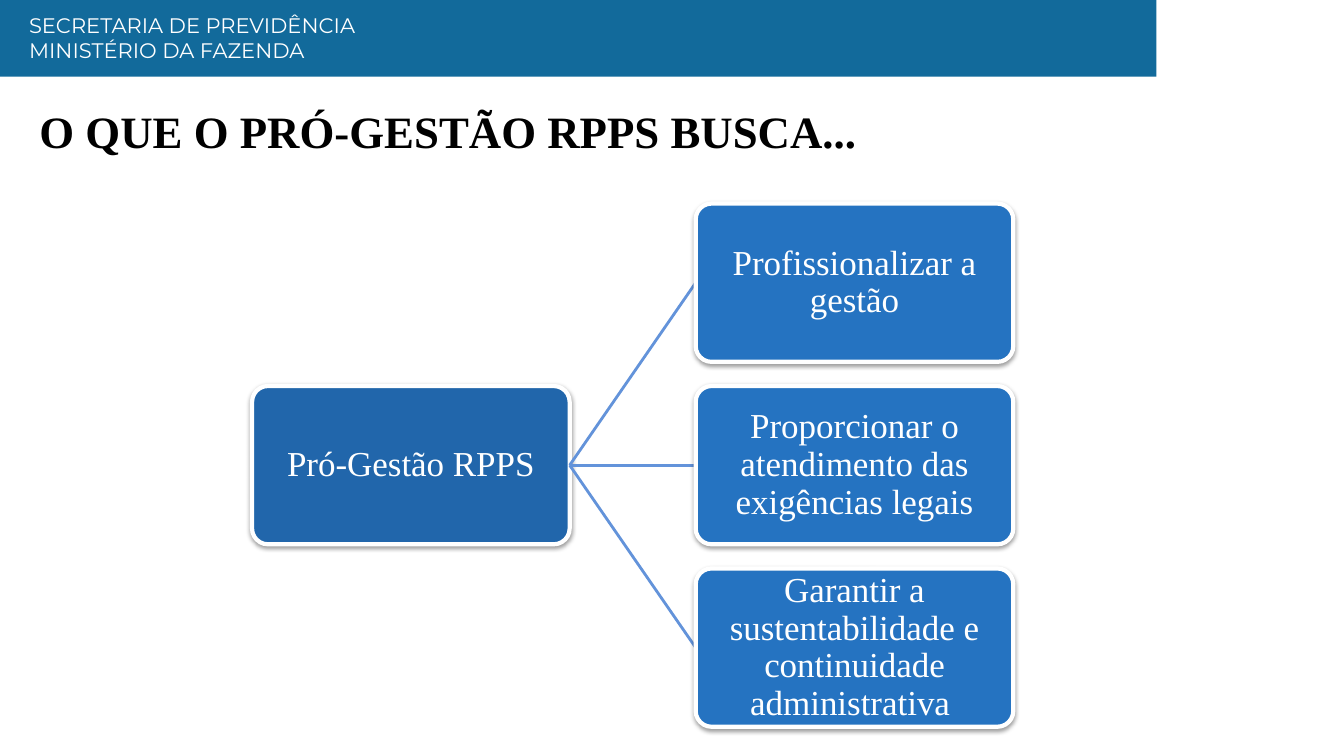
from lxml.etree import SubElement
from pptx import Presentation
from pptx.dml.color import RGBColor
from pptx.enum.shapes import MSO_CONNECTOR, MSO_SHAPE
from pptx.enum.text import MSO_ANCHOR, PP_ALIGN
from pptx.oxml.ns import qn
from pptx.util import Inches, Pt

WHITE = RGBColor(0xFF, 0xFF, 0xFF)
BLACK = RGBColor(0x00, 0x00, 0x00)
BANNER_BLUE = RGBColor(0x12, 0x6A, 0x9B)
ROOT_BLUE = RGBColor(0x21, 0x66, 0xAB)
GOAL_BLUE = RGBColor(0x25, 0x73, 0xC1)
LINE_BLUE = RGBColor(0x63, 0x93, 0xDA)

BOX_WIDTH, BOX_HEIGHT = 3.15, 1.57
ROOT_LEFT, GOAL_LEFT = 2.5, 6.9
FIRST_TOP, ROW_STEP = 2.02, 1.81
GOALS = [
    "Profissionalizar a gestão",
    "Proporcionar o atendimento das exigências legais",
    "Garantir a sustentabilidade e continuidade administrativa ",
]


class SlideBuilder:
    """Holds the current slide and its shared fonts."""

    heading_font = "Montserrat"
    body_font = "Times New Roman"

    def __init__(self, slide):
        self.slide = slide

    def style(self, paragraph, name, size, color, bold=False):
        font = paragraph.font
        font.name, font.size, font.bold = name, Pt(size), bold
        font.color.rgb = color

    def place(self, shape, left, top, width, height):
        shape.left, shape.top = Inches(left), Inches(top)
        shape.width, shape.height = Inches(width), Inches(height)

    def title(self, text, left, top, width, height):
        title = self.slide.shapes.title
        self.place(title, left, top, width, height)
        frame = title.text_frame
        frame.text = text
        frame.word_wrap = True
        frame.vertical_anchor = MSO_ANCHOR.TOP
        paragraph = frame.paragraphs[0]
        paragraph.alignment = PP_ALIGN.LEFT
        self.style(paragraph, self.body_font, 32, BLACK, bold=True)

    def banner(self, left, top, width, height):
        shape = self.slide.shapes.add_shape(
            MSO_SHAPE.RECTANGLE, Inches(left), Inches(top), Inches(width), Inches(height))
        shape.fill.solid()
        shape.fill.fore_color.rgb = BANNER_BLUE
        shape.line.fill.background()
        shape.shadow.inherit = False

    def heading(self, lines, left, top, width, height):
        box = self.slide.shapes.add_textbox(
            Inches(left), Inches(top), Inches(width), Inches(height))
        frame = box.text_frame
        frame.word_wrap = True
        frame.text = "\n".join(lines)
        for paragraph in frame.paragraphs:
            self.style(paragraph, self.heading_font, 15, WHITE)

    def box(self, text, left, top, color):
        shape = self.slide.shapes.add_shape(
            MSO_SHAPE.ROUNDED_RECTANGLE, Inches(left), Inches(top),
            Inches(BOX_WIDTH), Inches(BOX_HEIGHT))
        shape.adjustments[0] = 0.1
        shape.fill.solid()
        shape.fill.fore_color.rgb = color
        shape.line.color.rgb = WHITE
        shape.line.width = Pt(3)
        self.drop_shadow(shape)
        frame = shape.text_frame
        frame.word_wrap = True
        frame.vertical_anchor = MSO_ANCHOR.MIDDLE
        frame.margin_left = frame.margin_right = Inches(0.07)
        frame.margin_top = frame.margin_bottom = Inches(0.07)
        frame.text = text
        paragraph = frame.paragraphs[0]
        paragraph.alignment = PP_ALIGN.CENTER
        paragraph.line_spacing = 0.9
        self.style(paragraph, self.body_font, 25, WHITE)

    def drop_shadow(self, shape):
        shape.shadow.inherit = False
        effects = shape._element.spPr.find(qn("a:effectLst"))
        shadow = SubElement(effects, qn("a:outerShdw"), blurRad=str(Pt(3.1)),
                            dist=str(Pt(1.6)), dir="5400000", rotWithShape="0")
        color = SubElement(shadow, qn("a:srgbClr"), val=str(BLACK))
        SubElement(color, qn("a:alpha"), val="38000")

    def link(self, start, end):
        x1, y1, x2, y2 = (Inches(value) for value in (*start, *end))
        connector = self.slide.shapes.add_connector(MSO_CONNECTOR.STRAIGHT, x1, y1, x2, y2)
        connector.line.color.rgb = LINE_BLUE
        connector.line.width = Pt(2)
        SubElement(connector._element.spPr, qn("a:effectLst"))


def main():
    presentation = Presentation()
    presentation.slide_width = Inches(13.33)
    presentation.slide_height = Inches(7.5)
    builder = SlideBuilder(presentation.slides.add_slide(presentation.slide_layouts[5]))

    builder.banner(-0.01, -0.01, 11.48, 0.77)
    builder.heading(["SECRETARIA DE PREVIDÊNCIA", "MINISTÉRIO DA FAZENDA"],
                    0.19, 0.07, 7.66, 0.61)
    builder.title("O QUE O PRÓ-GESTÃO RPPS BUSCA...", 0.29, 0.98, 11.34, 0.64)

    root_top = FIRST_TOP + ROW_STEP
    builder.box("Pró-Gestão RPPS", ROOT_LEFT, root_top, ROOT_BLUE)
    link_start = (ROOT_LEFT + BOX_WIDTH, root_top + BOX_HEIGHT / 2)
    for row, goal in enumerate(GOALS):
        top = FIRST_TOP + row * ROW_STEP
        builder.link(link_start, (GOAL_LEFT, top + BOX_HEIGHT / 2))
        builder.box(goal, GOAL_LEFT, top, GOAL_BLUE)

    presentation.save("out.pptx")


if __name__ == "__main__":
    main()
